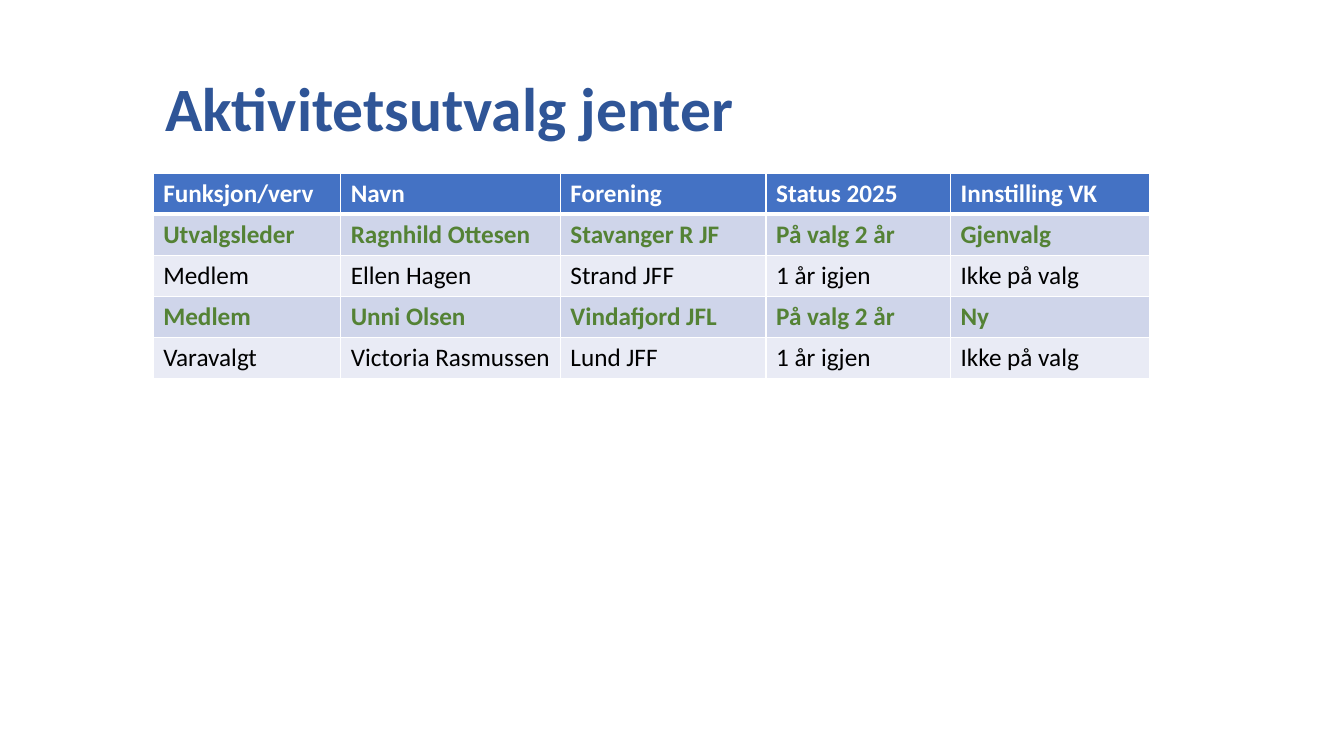
from lxml.etree import SubElement
from pptx import Presentation
from pptx.dml.color import RGBColor
from pptx.enum.text import MSO_ANCHOR, MSO_AUTO_SIZE, PP_ALIGN
from pptx.oxml.ns import qn
from pptx.util import Inches, Pt

WHITE = RGBColor(0xFF, 0xFF, 0xFF)
BLACK = RGBColor(0x00, 0x00, 0x00)
NAVY = RGBColor(0x2F, 0x55, 0x97)
BLUE = RGBColor(0x44, 0x72, 0xC4)
GREEN = RGBColor(0x54, 0x82, 0x35)
BANDS = RGBColor(0xE9, 0xEB, 0xF5), RGBColor(0xCF, 0xD5, 0xEA)

COLUMN_SHARES = [13.95, 16.35, 15.3, 13.73, 14.78]
ROW_SHARE = 5.42
MEMBERS = [
    ["Funksjon/verv", "Navn", "Forening", "Status 2025", "Innstilling VK"],
    ["Utvalgsleder", "Ragnhild Ottesen", "Stavanger R JF", "På valg 2 år", "Gjenvalg"],
    ["Medlem", "Ellen Hagen", "Strand JFF", "1 år igjen", "Ikke på valg"],
    ["Medlem", "Unni Olsen", "Vindafjord JFL", "På valg 2 år", "Ny"],
    ["Varavalgt", "Victoria Rasmussen", "Lund JFF", "1 år igjen", "Ikke på valg"],
]


class Deck:
    """Holds the style and the current slide; lengths are percent of the slide's size."""

    font = "Calibri"

    def __init__(self):
        self.prs = Presentation()
        self.prs.slide_width, self.prs.slide_height = Inches(13.33), Inches(7.5)
        self.s = self.prs.slides.add_slide(self.prs.slide_layouts[5])

    def x(self, share):
        return round(self.prs.slide_width * share / 100)

    def y(self, share):
        return round(self.prs.slide_height * share / 100)

    def text(self, tf, text, size, color, bold):
        p = tf.paragraphs[0]
        p.text = text
        p.alignment = PP_ALIGN.LEFT
        f = p.runs[0].font
        f.name, f.size, f.bold = self.font, Pt(size), bold
        f.color.rgb = color
        return p

    def title(self, text, left, top, width, height):
        sp = self.s.shapes.title
        sp.left, sp.top = self.x(left), self.y(top)
        sp.width, sp.height = self.x(width), self.y(height)
        tf = sp.text_frame
        tf.word_wrap, tf.auto_size = True, MSO_AUTO_SIZE.NONE
        tf.vertical_anchor = MSO_ANCHOR.MIDDLE
        self.text(tf, text, 44, NAVY, True).line_spacing = 0.9

    def borders(self, cell, top, bottom):
        tcPr = cell._tc.get_or_add_tcPr()
        for tag, width in ("lnL", 1), ("lnR", 1), ("lnT", top), ("lnB", bottom):
            ln = SubElement(tcPr, qn("a:" + tag), w=str(Pt(width)))
            SubElement(SubElement(ln, qn("a:solidFill")), qn("a:srgbClr"), val=str(WHITE))

    def table(self, rows, left, top):
        frame = self.s.shapes.add_table(
            len(rows), len(rows[0]), self.x(left), self.y(top),
            self.x(sum(COLUMN_SHARES)), self.y(ROW_SHARE * len(rows)))
        tbl = frame.table
        for column, share in zip(tbl.columns, COLUMN_SHARES):
            column.width = self.x(share)
        for i, texts in enumerate(rows):
            tbl.rows[i].height = self.y(ROW_SHARE)
            up_for_election = i % 2 == 1
            fill = BANDS[i % 2] if i else BLUE
            color = WHITE if i == 0 else GREEN if up_for_election else BLACK
            for j, text in enumerate(texts):
                cell = tbl.cell(i, j)
                self.borders(cell, 3 if i == 1 else 1, 3 if i == 0 else 1)
                cell.fill.solid()
                cell.fill.fore_color.rgb = fill
                self.text(cell.text_frame, text, 18, color, i == 0 or up_for_election)


def main():
    deck = Deck()
    deck.title("Aktivitetsutvalg jenter", 11.55, 5.07, 73.9, 19.33)
    deck.table(MEMBERS, 11.4, 22.93)
    deck.prs.save("out.pptx")


if __name__ == "__main__":
    main()
